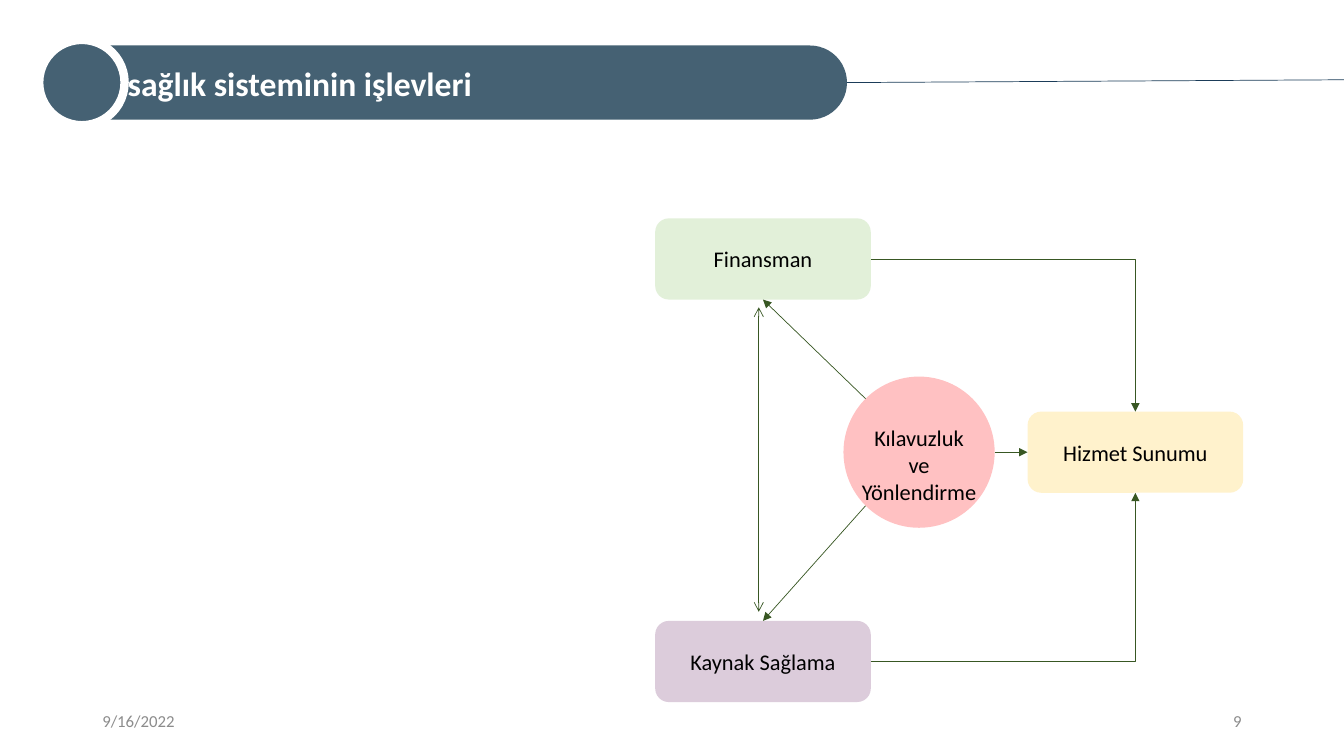
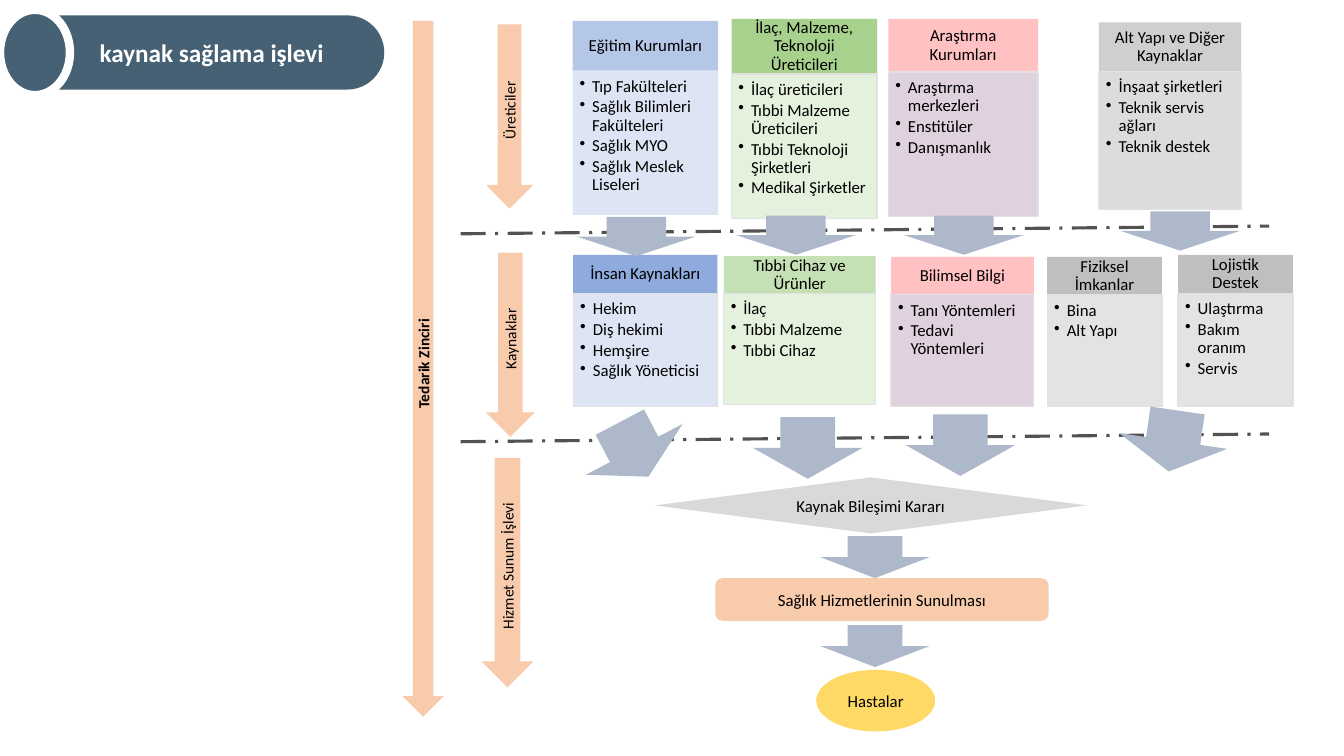
from lxml.etree import SubElement
from pptx import Presentation
from pptx.dml.color import RGBColor
from pptx.enum.dml import MSO_LINE
from pptx.enum.shapes import MSO_CONNECTOR as CONNECTOR, MSO_SHAPE as SHAPE
from pptx.enum.text import MSO_ANCHOR as ANCHOR, PP_ALIGN as ALIGN
from pptx.oxml.ns import qn
from pptx.util import Pt

FONT = "Calibri"
COLORS = {
    "black": "000000", "white": "FFFFFF", "footer": "8C8C8C",
    "band": "456173", "band line": "1B3C59", "flow": "385723", "divider": "525252",
    "border": "E1E1E1", "arrow": "ADB9CA", "orange": "F8CBAD", "yellow": "FFD966",
    "cream": "FFF2CC", "pink": "FFC1C2", "lilac": "DCCCDB",
    "blue": "B4C7E7", "strong blue": "8FAADC", "pale blue": "DAE3F3",
    "green": "A9D18E", "soft green": "C5E0B4", "pale green": "E2F0D9",
    "gray": "D0CECE", "strong gray": "BFBFBF", "pale gray": "D9D9D9",
    "light gray": "E1E1E1",
}

# Cards: left, top, width, heading height, body height, heading and body
# colours, bordered, heading, bullets
CARDS = [
    (409, 15, 104, 35.5, 103, "blue", "pale blue", False, "Eğitim Kurumları",
     ["Tıp Fakülteleri", "Sağlık Bilimleri Fakülteleri", "Sağlık MYO",
      "Sağlık Meslek Liseleri"]),
    (522.5, 13.5, 104, 39.5, 103, "green", "pale green", True,
     "İlaç, Malzeme, Teknoloji Üreticileri",
     ["İlaç üreticileri", "Tıbbi Malzeme Üreticileri", "Tıbbi Teknoloji Şirketleri",
      "Medikal Şirketler"]),
    (634.5, 13.5, 107, 38, 103, "pink", "lilac", True, "Araştırma Kurumları",
     ["Araştırma merkezleri", "Enstitüler", "Danışmanlık"]),
    (785, 16, 101.5, 35, 98.5, "gray", "pale gray", True, "Alt Yapı ve Diğer Kaynaklar",
     ["İnşaat şirketleri", "Teknik servis ağları", "Teknik destek"]),
    (409.5, 182, 103, 27.5, 81, "strong blue", "pale blue", True, "İnsan Kaynakları",
     ["Hekim", "Diş hekimi", "Hemşire", "Sağlık Yöneticisi"]),
    (517, 183, 108.5, 26.5, 79.5, "soft green", "pale green", True,
     "Tıbbi Cihaz ve Ürünler", ["İlaç", "Tıbbi Malzeme", "Tıbbi Cihaz"]),
    (636.5, 183.5, 102, 27, 80, "pink", "lilac", True, "Bilimsel Bilgi",
     ["Tanı Yöntemleri", "Tedavi Yöntemleri"]),
    (748, 183.5, 82, 27, 80, "strong gray", "light gray", True, "Fiziksel İmkanlar",
     ["Bina", "Alt Yapı"]),
    (841.5, 182, 82, 27.5, 80.5, "strong gray", "light gray", True, "Lojistik Destek",
     ["Ulaştırma", "Bakım oranım", "Servis"]),
]


def rgb(name):
    return RGBColor.from_string(COLORS[name])


def set_text(shape, lines, size, color="black", bold=False, align=ALIGN.CENTER,
             anchor=ANCHOR.MIDDLE):
    frame = shape.text_frame
    frame.word_wrap = True
    frame.vertical_anchor = anchor
    frame.text = "\n".join(lines)
    for paragraph in frame.paragraphs:
        paragraph.alignment = align
        for run in paragraph.runs:
            run.font.name = FONT
            run.font.size = Pt(size)
            run.font.bold = bold
            run.font.color.rgb = rgb(color)


def set_insets(shape, left, top, right, bottom):
    frame = shape.text_frame
    frame.margin_left, frame.margin_top = Pt(left), Pt(top)
    frame.margin_right, frame.margin_bottom = Pt(right), Pt(bottom)


def add_block(slide, kind, left, top, width, height, fill, text=None, size=12):
    shape = slide.shapes.add_shape(kind, Pt(left), Pt(top), Pt(width), Pt(height))
    shape.shadow.inherit = False
    shape.fill.solid()
    shape.fill.fore_color.rgb = rgb(fill)
    shape.line.fill.background()
    if text:
        set_text(shape, [text], size)
    return shape


def add_label(slide, left, top, width, height, text, size, color="black",
              align=ALIGN.CENTER, anchor=ANCHOR.MIDDLE):
    box = slide.shapes.add_textbox(Pt(left), Pt(top), Pt(width), Pt(height))
    set_text(box, [text], size, color, align=align, anchor=anchor)


def add_line(slide, start=(0, 0), end=(0, 0), color="flow", weight=0.5, head=None,
             tail=None, begin_at=None, end_at=None, bent=False):
    kind = CONNECTOR.ELBOW if bent else CONNECTOR.STRAIGHT
    line = slide.shapes.add_connector(kind, *[Pt(value) for value in (*start, *end)])
    if begin_at:
        line.begin_connect(*begin_at)
    if end_at:
        line.end_connect(*end_at)
    line.line.color.rgb = rgb(color)
    line.line.width = Pt(weight)
    properties = line.element.spPr
    if bent:
        properties.find(qn("a:prstGeom")).set("prst", "bentConnector2")
    outline = properties.find(qn("a:ln"))
    for tag, arrow in (("a:headEnd", head), ("a:tailEnd", tail)):
        if arrow:
            SubElement(outline, qn(tag)).set("type", arrow)
    SubElement(properties, qn("a:effectLst"))
    return line


def add_title(slide, text, left, top, width, badge_width, size, align, inset):
    band = add_block(slide, SHAPE.ROUNDED_RECTANGLE, left, top, width, 53, "band")
    band.adjustments[0] = 0.5
    set_text(band, [text], size, "white", True, align)
    band.text_frame.margin_left = Pt(inset)
    badge = add_block(slide, SHAPE.OVAL, left, top - 4, badge_width, 61, "band")
    badge.line.color.rgb = rgb("white")
    badge.line.width = Pt(6)
    return band


def add_card(slide, left, top, width, heading_height, body_height, heading_fill,
             body_fill, bordered, heading, bullets):
    header = add_block(slide, SHAPE.RECTANGLE, left, top, width, heading_height,
                       heading_fill, heading)
    set_insets(header, 6.5, 3.6, 6.5, 3.6)
    header.text_frame.paragraphs[0].line_spacing = 0.9

    body = add_block(slide, SHAPE.RECTANGLE, left, top + heading_height, width,
                     body_height, body_fill)
    color = body.element.spPr.find(qn("a:solidFill")).find(qn("a:srgbClr"))
    SubElement(color, qn("a:alpha")).set("val", "90000")
    if bordered:
        body.line.color.rgb = rgb("border")
        body.line.width = Pt(1)
    set_text(body, bullets, 12, align=ALIGN.LEFT, anchor=ANCHOR.TOP)
    set_insets(body, 5, 5, 6.5, 7)
    for paragraph in body.text_frame.paragraphs:
        paragraph.line_spacing = 0.9
        paragraph.space_after = Pt(1.8)
        properties = paragraph._p.get_or_add_pPr()
        properties.set("marL", str(Pt(9)))
        properties.set("indent", str(-Pt(9)))
        SubElement(properties, qn("a:buChar")).set("char", "•")


def add_stage_arrow(slide, left, top, width, height, text, bold=False):
    arrow = add_block(slide, SHAPE.DOWN_ARROW, left, top, width, height, "orange")
    set_text(arrow, [text], 11, bold=bold)
    arrow.text_frame._txBody.bodyPr.set("vert", "vert270")


def build_functions_slide(slide):
    # Footer
    add_label(slide, 66, 500.5, 216, 29, "9/16/2022", 12, "footer", ALIGN.LEFT)
    add_label(slide, 678, 500.5, 216, 29, "9", 12, "footer", ALIGN.RIGHT)

    # Functions
    delivery, resources, finance = [
        add_block(slide, SHAPE.ROUNDED_RECTANGLE, left, top, 154, 58, fill, text, 16)
        for left, top, fill, text in (
            (734, 294, "cream", "Hizmet Sunumu"),
            (468, 443.5, "lilac", "Kaynak Sağlama"),
            (468, 156, "pale green", "Finansman"))]

    # Flows between the functions
    for start, target in (((618.5, 285), (finance, 2)), ((618.5, 361), (resources, 0)),
                          ((710.5, 323), (delivery, 1))):
        add_line(slide, start, tail="triangle", end_at=target)
    for source, side in ((resources, 2), (finance, 0)):
        add_line(slide, tail="triangle", begin_at=(source, 3),
                 end_at=(delivery, side), bent=True)
    add_line(slide, (542, 219.5), (542, 437), head="arrow", tail="arrow")

    # Stewardship
    add_block(slide, SHAPE.OVAL, 602.5, 269, 108, 108, "pink")
    add_label(slide, 606.5, 299.5, 100, 46, "Kılavuzluk\vve\vYönlendirme", 16,
              anchor=ANCHOR.TOP)

    # Title
    band = add_title(slide, "sağlık sisteminin işlevleri", 28, 32.5, 577, 61, 24,
                     ALIGN.LEFT, 55.5)
    add_line(slide, end=(960, 57), color="band line", begin_at=(band, 3))


def build_resources_slide(slide):
    # Dividers between the stages
    for left_y, right_y in ((167, 161.5), (315.5, 310)):
        divider = add_line(slide, (329, left_y), (906.5, right_y), "divider", 2.25)
        divider.line.dash_style = MSO_LINE.LONG_DASH_DOT

    # Producers and resources
    for card in CARDS:
        add_card(slide, *card)

    # Stages
    add_stage_arrow(slide, 347, 17.5, 34, 131.5, "Üreticiler")
    add_stage_arrow(slide, 347, 180.5, 35, 131.5, "Kaynaklar")
    add_stage_arrow(slide, 344, 327, 37, 164, "Hizmet Sunum İşlevi")
    add_stage_arrow(slide, 287.5, 15, 29.5, 497, "Tedarik Zinciri", bold=True)

    # Arrows below the two card rows
    for left, top in ((412, 155), (526, 154), (646, 154), (800.5, 151)):
        add_block(slide, SHAPE.DOWN_ARROW, left, top, 85, 28, "arrow")
    for left, top, angle in ((414, 299, -27.7), (538, 298, 0), (647, 296, 0),
                             (799, 293, 8.3)):
        arrow = add_block(slide, SHAPE.DOWN_ARROW, left, top, 78, 44, "arrow")
        arrow.rotation = angle

    # From the decision to the patients
    add_block(slide, SHAPE.DIAMOND, 467.5, 341, 309, 40, "pale gray",
              "Kaynak Bileşimi Kararı")
    add_block(slide, SHAPE.ROUNDED_RECTANGLE, 511, 413, 238, 30.5, "orange",
              "Sağlık Hizmetlerinin Sunulması")
    add_block(slide, SHAPE.OVAL, 583, 478.5, 85, 44, "yellow", "Hastalar")
    for top in (383, 446.5):
        add_block(slide, SHAPE.DOWN_ARROW, 586, top, 78, 30, "arrow")

    # Title
    add_title(slide, "kaynak sağlama işlevi", 0, 11, 274.5, 50, 18, ALIGN.CENTER, 35)


def main():
    presentation = Presentation()
    presentation.slide_width, presentation.slide_height = Pt(960), Pt(540)
    blank = presentation.slide_layouts[6]
    for build in (build_functions_slide, build_resources_slide):
        build(presentation.slides.add_slide(blank))
    presentation.save("out.pptx")


if __name__ == "__main__":
    main()
